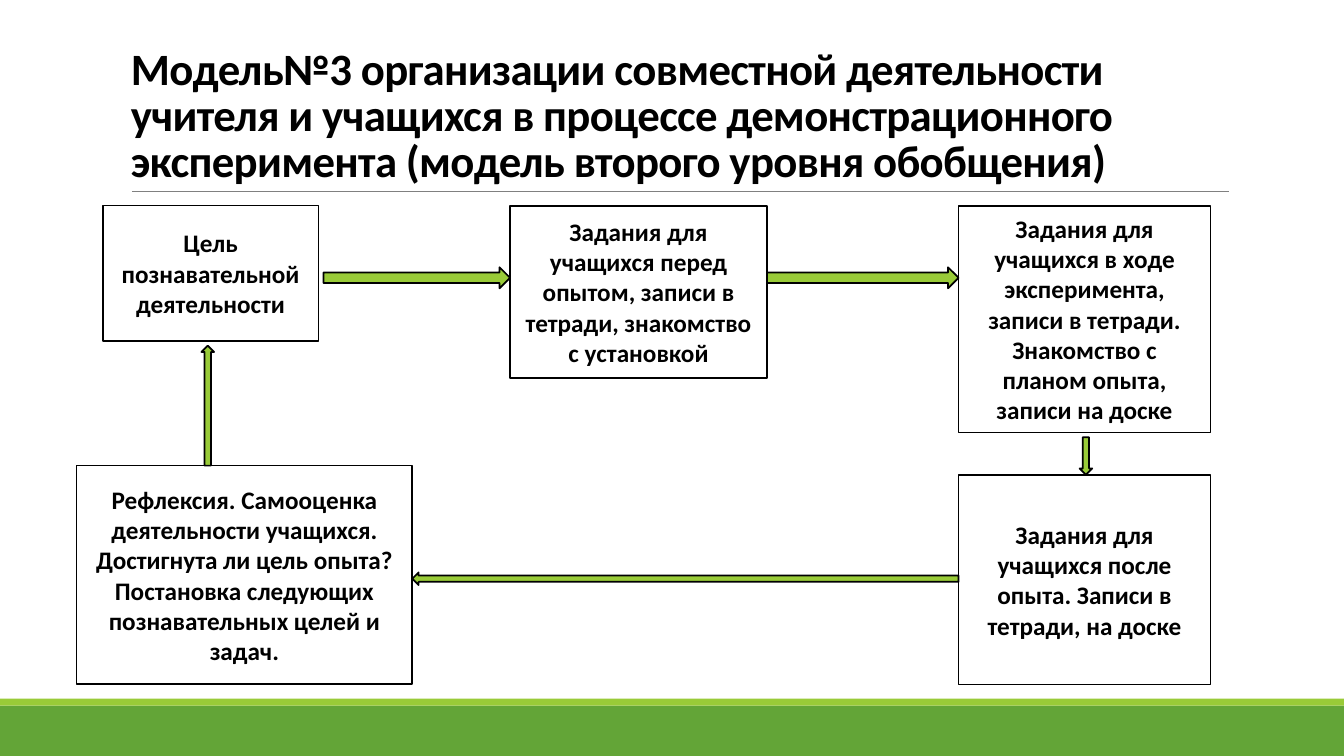
from dataclasses import dataclass
from typing import NamedTuple

from pptx import Presentation
from pptx import util as u
from pptx.dml.color import RGBColor
from pptx.enum import shapes, text
from pptx.oxml import ns
from lxml import etree


@dataclass(frozen=True)
class Theme:
    font: str = "Calibri"
    title_size: float = 32
    body_size: float = 18
    border: float = 1.25
    ink: str = "000000"
    paper: str = "FFFFFF"
    rule: str = "808080"
    green: str = "63A537"
    lime: str = "99CB38"


class Box(NamedTuple):
    left: float
    top: float
    width: float
    height: float

    @property
    def right(self):
        return self.left + self.width

    @property
    def bottom(self):
        return self.top + self.height

    def inside(self, left, top, width, height):
        return Box(self.left + left, self.top + top, width, height)

    def points(self):
        return [u.Pt(value) for value in self]


THEME = Theme()
ARROWS = shapes.MSO_SHAPE


def add_block(page, box, fill, kind=ARROWS.RECTANGLE, border=None):
    block = page.shapes.add_shape(kind, *box.points())
    block.shadow.inherit = False
    block.fill.solid()
    block.fill.fore_color.rgb = RGBColor.from_string(fill)
    if border:
        block.line.color.rgb = RGBColor.from_string(border)
        block.line.width = u.Pt(THEME.border)
    else:
        block.line.fill.background()
    return block


def add_words(shape, words, size, anchor, align):
    frame = shape.text_frame
    frame.word_wrap = True
    frame.vertical_anchor = anchor
    para = frame.paragraphs[0]
    para.alignment = align
    span = para.add_run()
    span.text = words
    span.font.name = THEME.font
    span.font.size = u.Pt(size)
    span.font.bold = True
    span.font.color.rgb = RGBColor.from_string(THEME.ink)
    return para, span


def draw_footer(page, box):
    stripe = 5
    add_block(page, box.inside(0, stripe, box.width, box.height - stripe), THEME.green)
    add_block(page, box.inside(0, 0, box.width, stripe), THEME.lime)


def draw_title(page, box):
    # Rule under the heading
    start, end, level = box.left + 7.9, box.right - 0.5, box.bottom
    rule = page.shapes.add_connector(
        shapes.MSO_CONNECTOR.STRAIGHT, *[u.Pt(v) for v in (start, level, end, level)])
    rule.line.color.rgb = RGBColor.from_string(THEME.rule)
    rule.line.width = u.Pt(0.5)
    etree.SubElement(rule.element.spPr, ns.qn("a:effectLst"))

    # Heading
    heading = page.shapes.add_textbox(*box.points())
    para, span = add_words(
        heading,
        "Модель№3 организации совместной деятельности учителя и учащихся в процессе "
        "демонстрационного эксперимента (модель второго уровня обобщения)",
        THEME.title_size, text.MSO_ANCHOR.BOTTOM, text.PP_ALIGN.LEFT)
    para.line_spacing = 0.85
    span.font._element.set("spc", "-50")


def draw_cycle(page, box):
    # Steps
    column = 630
    goal = box.inside(18.7, 0, 154.1, 96.5)
    before = box.inside(309.6, 0, 183.6, 123.1)
    during = box.inside(column, 0, 180, 162)
    after = box.inside(column, 192.2, 180, 149.8)
    review = box.inside(0, 185.7, 239.8, 156.3)
    steps = [
        (goal, "Цель познавательной деятельности"),
        (before, "Задания для учащихся перед опытом, записи в тетради, "
                 "знакомство с установкой"),
        (during, "Задания для учащихся в ходе эксперимента, записи в тетради. "
                 "Знакомство с планом опыта, записи на доске"),
        (review, "Рефлексия. Самооценка деятельности учащихся. Достигнута ли цель "
                 "опыта? Постановка следующих познавательных целей и задач."),
        (after, "Задания для учащихся после опыта. Записи в тетради, на доске"),
    ]
    for place, words in steps:
        step = add_block(page, place, THEME.paper, border=THEME.ink)
        add_words(step, words, THEME.body_size,
                  text.MSO_ANCHOR.MIDDLE, text.PP_ALIGN.CENTER)

    # Arrows fill the gaps between neighbouring steps
    gap, thick, thin = 3.5, 15, 9
    forward_top = box.top + 44
    back_top = box.top + 262
    down_left = during.left + during.width / 2 - thin / 2 + 1
    up_left = goal.left + goal.width / 2 - thin / 2 - 2
    arrows = [
        (ARROWS.RIGHT_ARROW, goal.right + gap, forward_top, before.left, forward_top + thick),
        (ARROWS.RIGHT_ARROW, before.right, forward_top, during.left, forward_top + thick),
        (ARROWS.DOWN_ARROW, down_left, during.bottom + gap, down_left + thin, after.top),
        (ARROWS.LEFT_ARROW, review.right, back_top, after.left, back_top + thin),
        (ARROWS.UP_ARROW, up_left, goal.bottom + gap, up_left + thin, review.top),
    ]
    for kind, left, top, right, bottom in arrows:
        add_block(page, Box(left, top, right - left, bottom - top),
                  THEME.lime, kind, THEME.ink)


def main():
    deck = Presentation()
    deck.slide_width, deck.slide_height = u.Pt(960), u.Pt(540)
    page = deck.slides.add_slide(deck.slide_layouts[6])
    draw_footer(page, Box(0, 499, 960, 41))
    draw_title(page, Box(86.4, 22.3, 792, 114.5))
    draw_cycle(page, Box(54.7, 146.9, 810, 342))
    deck.save("out.pptx")


if __name__ == "__main__":
    main()
